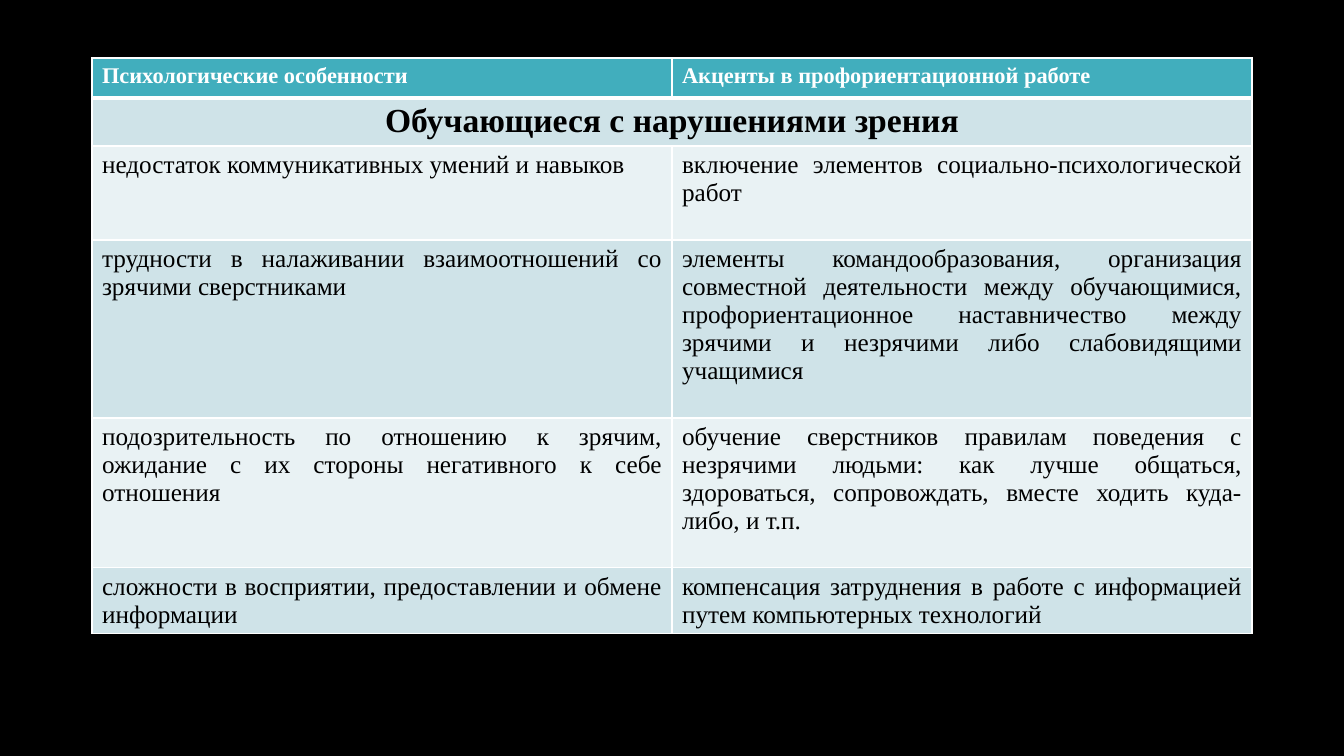
from lxml.etree import SubElement
from pptx import Presentation
from pptx.dml.color import RGBColor
from pptx.enum.text import MSO_ANCHOR, PP_ALIGN
from pptx.oxml.ns import qn
from pptx.util import Emu, Pt

EMU_PER_PX = 12192000 / 1344
COLORS = {
    "background": "000000",
    "border": "FFFFFF",
    "heading": "41AEBD",
    "dark_band": "CFE3E8",
    "light_band": "E9F2F4",
    "light_text": "FFFFFF",
    "dark_text": "000000",
}
FORMATS = {
    "heading": {"size": Pt(16), "bold": True},
    "group": {"size": Pt(24), "bold": True},
    "body": {"size": Pt(18), "bold": False},
}
TABLE_BOX = (92, 58, 1160, 575)
ROW_HEIGHTS = (40, 48, 94, 178, 150, 65)
GUIDANCE = [
    ("Психологические особенности", "Акценты в профориентационной работе"),
    ("Обучающиеся с нарушениями зрения", ""),
    (
        "недостаток коммуникативных умений и навыков",
        "включение элементов социально-психологической работ",
    ),
    (
        "трудности в налаживании взаимоотношений со зрячими сверстниками",
        "элементы командообразования, организация совместной деятельности между "
        "обучающимися, профориентационное наставничество между зрячими и незрячими "
        "либо слабовидящими учащимися",
    ),
    (
        "подозрительность по отношению к зрячим, ожидание с их стороны негативного "
        "к себе отношения",
        "обучение сверстников правилам поведения с незрячими людьми: как лучше "
        "общаться, здороваться, сопровождать, вместе ходить куда-либо, и т.п.",
    ),
    (
        "сложности в восприятии, предоставлении и обмене информации",
        "компенсация затруднения в работе с информацией путем компьютерных технологий",
    ),
]


def px(length):
    """Turn a length in px into EMU."""
    return Emu(round(length * EMU_PER_PX))


def rgb(name):
    """Look up a named colour."""
    return RGBColor.from_string(COLORS[name])


def add_borders(cell, widths):
    """Draw the cell's sides with the given widths in points."""
    properties = cell._tc.get_or_add_tcPr()
    for side, width in widths.items():
        line = SubElement(properties, qn(f"a:ln{side}"), w=str(Pt(width)))
        fill = SubElement(line, qn("a:solidFill"))
        SubElement(fill, qn("a:srgbClr"), val=COLORS["border"])


def fill_cell(cell, text, row):
    """Write and format one cell according to its row."""
    role = {0: "heading", 1: "group"}.get(row, "body")
    add_borders(cell, {"L": 1, "R": 1, "T": 3 if row == 1 else 1, "B": 3 if row == 0 else 1})
    band = "heading" if row == 0 else "dark_band" if row % 2 else "light_band"
    cell.fill.solid()
    cell.fill.fore_color.rgb = rgb(band)
    cell.vertical_anchor = MSO_ANCHOR.TOP
    cell.text = text
    paragraph = cell.text_frame.paragraphs[0]
    paragraph.alignment = PP_ALIGN.CENTER if role == "group" else PP_ALIGN.JUSTIFY
    for run in paragraph.runs:
        for attribute, value in {"name": "Times New Roman", **FORMATS[role]}.items():
            setattr(run.font, attribute, value)
        run.font.color.rgb = rgb("light_text" if row == 0 else "dark_text")


def add_guidance_table(slide, box):
    """Place the table of features and guidance accents in the box."""
    table = slide.shapes.add_table(len(GUIDANCE), 2, *map(px, box)).table
    for column in table.columns:
        column.width = px(box[2] // 2)
    for row, (texts, height) in enumerate(zip(GUIDANCE, ROW_HEIGHTS)):
        table.rows[row].height = px(height)
        for column, text in enumerate(texts):
            fill_cell(table.cell(row, column), text, row)
    table.cell(1, 0).merge(table.cell(1, 1))


def main():
    """Build and save the slide."""
    presentation = Presentation()
    presentation.slide_width, presentation.slide_height = px(1344), px(756)
    slide = presentation.slides.add_slide(presentation.slide_layouts[6])
    slide.background.fill.solid()
    slide.background.fill.fore_color.rgb = rgb("background")
    add_guidance_table(slide, TABLE_BOX)
    presentation.save("out.pptx")


if __name__ == "__main__":
    main()
